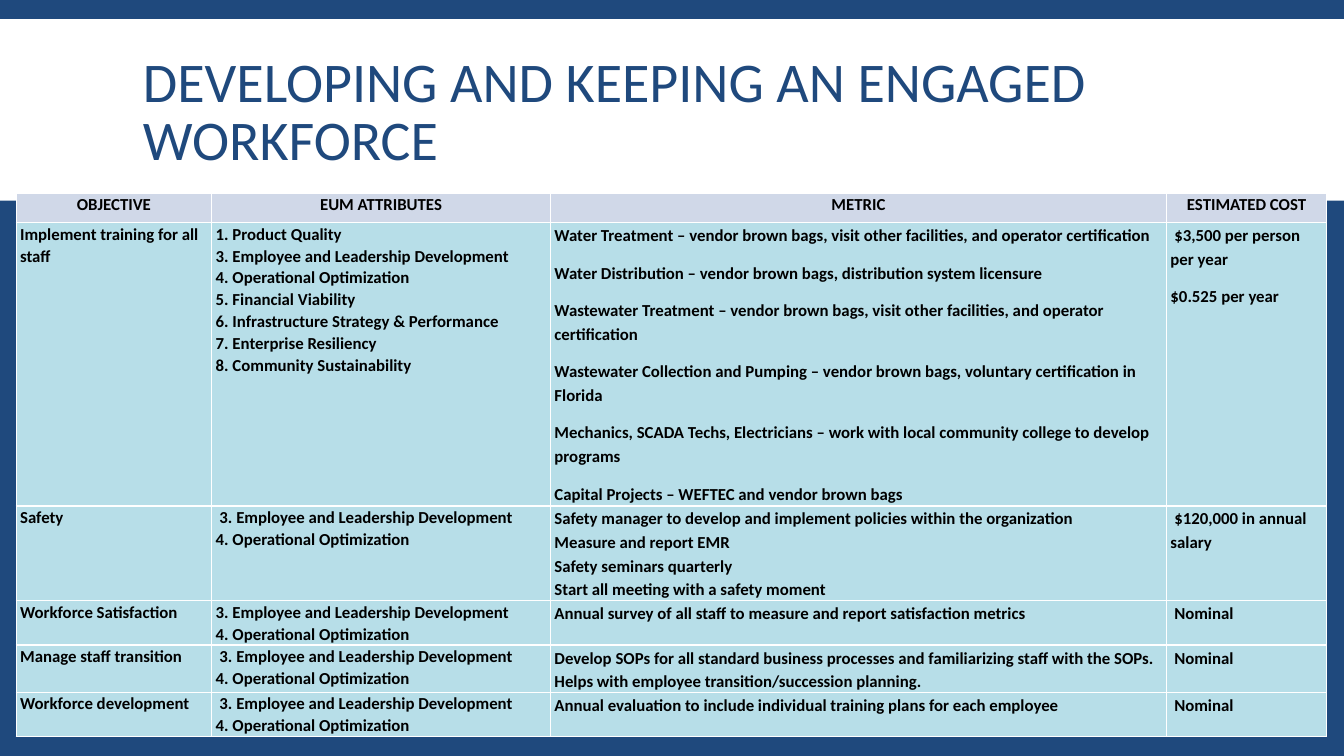
from lxml import etree
from pptx import Presentation
from pptx import util as u
from pptx.dml.color import RGBColor
from pptx.enum import shapes, text
from pptx.oxml.ns import qn

COLORS = {"navy": "1F497D", "white": "FFFFFF", "header": "D0D8E8",
          "body": "B7DEE8", "ink": "000000"}
COLUMN_WIDTHS = [1.94, 3.36, 6.11, 1.59]
# Each row is tall enough for its longest cell
ROW_HEIGHTS = [0.29, 2.81, 0.94, 0.44, 0.47, 0.44]
LEADERSHIP = "3. Employee and Leadership Development"
OPTIMIZATION = "4. Operational Optimization"

# One line of cell text is one paragraph
ROWS = [
    ["OBJECTIVE", "EUM ATTRIBUTES", "METRIC", "ESTIMATED COST"],
    ["Implement training for all staff",
     f"1. Product Quality\n{LEADERSHIP}\n{OPTIMIZATION}\n5. Financial Viability\n"
     "6. Infrastructure Strategy & Performance\n7. Enterprise Resiliency\n"
     "8. Community Sustainability",
     "Water Treatment – vendor brown bags, visit other facilities, and operator certification\n"
     "Water Distribution – vendor brown bags, distribution system licensure\n"
     "Wastewater Treatment – vendor brown bags, visit other facilities, and operator certification\n"
     "Wastewater Collection and Pumping – vendor brown bags, voluntary certification in Florida\n"
     "Mechanics, SCADA Techs, Electricians – work with local community college to develop programs\n"
     "Capital Projects – WEFTEC and vendor brown bags",
     " $3,500 per person per year\n$0.525 per year"],
    ["Safety", f" {LEADERSHIP}\n{OPTIMIZATION}",
     "Safety manager to develop and implement policies within the organization\n"
     "Measure and report EMR\nSafety seminars quarterly\n"
     "Start all meeting with a safety moment",
     " $120,000 in annual salary"],
    ["Workforce Satisfaction", f"{LEADERSHIP}\n{OPTIMIZATION}",
     "Annual survey of all staff to measure and report satisfaction metrics", " Nominal"],
    ["Manage staff transition", f" {LEADERSHIP}\n{OPTIMIZATION}",
     "Develop SOPs for all standard business processes and familiarizing staff with the SOPs. "
     "Helps with employee transition/succession planning.", " Nominal"],
    ["Workforce development", f" {LEADERSHIP}\n{OPTIMIZATION}",
     "Annual evaluation to include individual training plans for each employee", " Nominal"],
]


def set_font(para, size, color, bold=False):
    para.font.name = "Calibri"
    para.font.size = u.Pt(size)
    para.font.bold = bold
    para.font.color.rgb = RGBColor.from_string(COLORS[color])


def add_borders(cell):
    properties = cell._tc.get_or_add_tcPr()
    for position, side in enumerate(("lnL", "lnR", "lnT", "lnB")):
        line = etree.Element(qn(f"a:{side}"), w=str(u.Pt(1)))
        fill = etree.SubElement(line, qn("a:solidFill"))
        etree.SubElement(fill, qn("a:srgbClr"), val=COLORS["white"])
        properties.insert(position, line)


deck = Presentation()
deck.slide_width, deck.slide_height = u.Inches(13.33), u.Inches(7.5)
page = deck.slides.add_slide(deck.slide_layouts[6])
page.background.fill.solid()
page.background.fill.fore_color.rgb = RGBColor.from_string(COLORS["navy"])

# White title band
band = page.shapes.add_shape(shapes.MSO_SHAPE.RECTANGLE, 0, u.Inches(0.19),
                             deck.slide_width, u.Inches(1.8))
band.shadow.inherit = False
band.fill.solid()
band.fill.fore_color.rgb = RGBColor.from_string(COLORS["white"])
band.line.fill.background()

# Title
box = page.shapes.add_textbox(u.Inches(1.32), u.Inches(0.31), u.Inches(10.7), u.Inches(1.65))
box.text_frame.word_wrap = True
box.text_frame.vertical_anchor = text.MSO_ANCHOR.MIDDLE
title = box.text_frame.paragraphs[0]
title.text = "DEVELOPING AND KEEPING AN ENGAGED WORKFORCE"
title.line_spacing = 0.85
set_font(title, 40, "navy")

# Objectives table
table = page.shapes.add_table(len(ROW_HEIGHTS), len(COLUMN_WIDTHS), u.Inches(0.16),
                              u.Inches(1.92), u.Inches(sum(COLUMN_WIDTHS)),
                              u.Inches(sum(ROW_HEIGHTS))).table
for column, width in zip(table.columns, COLUMN_WIDTHS):
    column.width = u.Inches(width)
for row, height in zip(table.rows, ROW_HEIGHTS):
    row.height = u.Inches(height)

for row_index, row_texts in enumerate(ROWS):
    is_header = row_index == 0
    for column_index, cell_text in enumerate(row_texts):
        cell = table.cell(row_index, column_index)
        cell.margin_left = cell.margin_right = u.Inches(0.04)
        cell.margin_top = cell.margin_bottom = 0
        cell.fill.solid()
        cell.fill.fore_color.rgb = RGBColor.from_string(COLORS["header" if is_header else "body"])
        add_borders(cell)
        cell.text = cell_text
        is_loose = not is_header and column_index >= 2
        for para in cell.text_frame.paragraphs:
            para.line_spacing = 1.15 if is_loose else 1.07
            if is_loose and row_texts[0] != "Safety":
                para.space_after = u.Pt(10)
            if is_header:
                para.alignment = text.PP_ALIGN.CENTER
            set_font(para, 12, "ink", bold=True)

deck.save("out.pptx")
